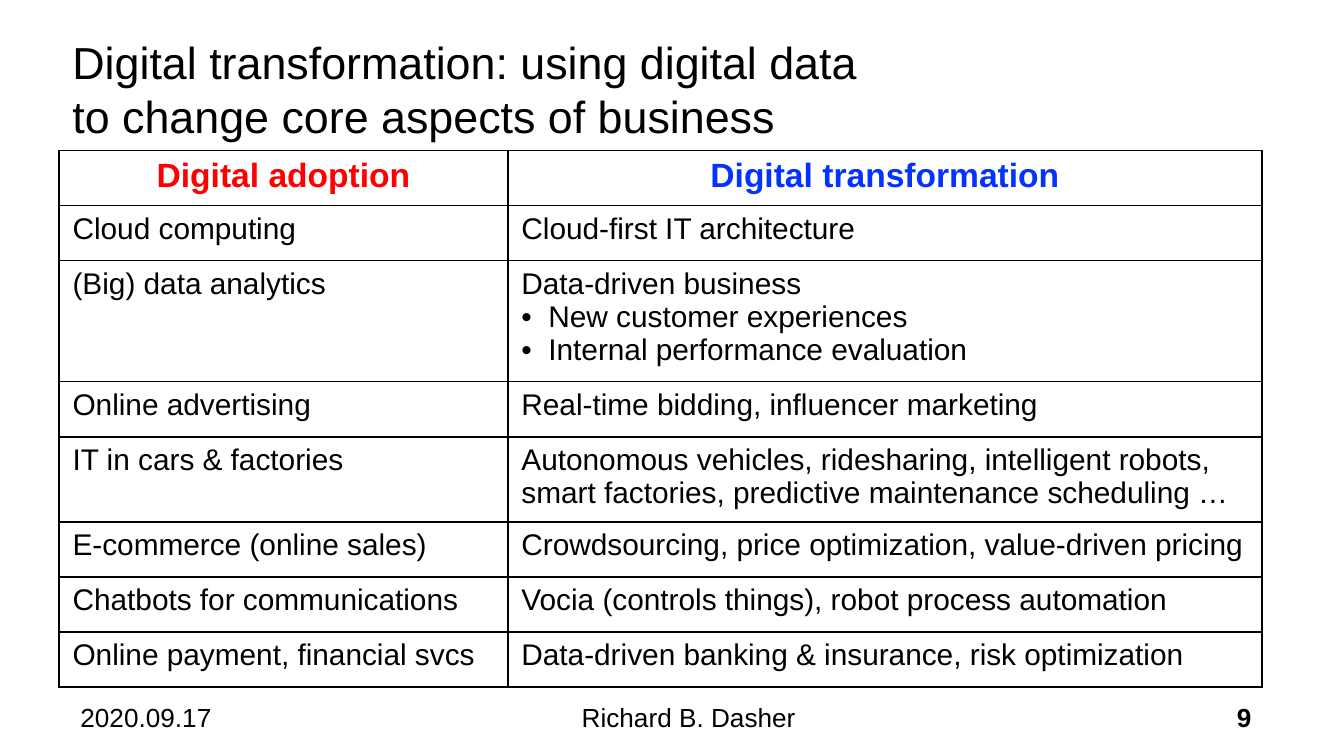
from lxml import etree
from pptx import Presentation
from pptx import util as u
from pptx.dml.color import RGBColor
from pptx.enum import text
from pptx.oxml import ns

FONT, BLACK, WHITE, RED, BLUE = "Arial", "000000", "FFFFFF", "FF0000", "0432FF"
SLIDE_WIDTH = 10
TABLE_PLACE = (0.44, 1.12, 8.94, 3.97)
COLUMN_WIDTHS = (3.34, 5.61)
ROW_HEIGHT = 0.41
HEADERS = (("Digital adoption", RED), ("Digital transformation", BLUE))
TOPICS = (
    ("Cloud computing", "Cloud-first IT architecture"),
    ("(Big) data analytics",
     "Data-driven business\n•  New customer experiences\n•  Internal performance evaluation"),
    ("Online advertising", "Real-time bidding, influencer marketing"),
    ("IT in cars & factories",
     "Autonomous vehicles, ridesharing, intelligent robots, "
     "smart factories, predictive maintenance scheduling …"),
    ("E-commerce (online sales)", "Crowdsourcing, price optimization, value-driven pricing"),
    ("Chatbots for communications", "Vocia (controls things), robot process automation"),
    ("Online payment, financial svcs", "Data-driven banking & insurance, risk optimization"),
)
FOOTERS = (
    ((0.5, 5.12, 2.08, 0.38), "2020.09.17", "LEFT", False),
    ((3.06, 5.12, 4.13, 0.38), "Richard B. Dasher", "CENTER", False),
    ((7.33, 5.12, 2.08, 0.38), "9", "RIGHT", True),
)


def color(value):
    return RGBColor.from_string(value)


def write(frame, words, size, ink=BLACK, bold=False, align="LEFT"):
    for index, line in enumerate(words.split("\n")):
        para = frame.add_paragraph() if index else frame.paragraphs[0]
        para.alignment = getattr(text.PP_ALIGN, align)
        span = para.add_run()
        span.text = line
        for name, value in {"name": FONT, "size": u.Pt(size), "bold": bold}.items():
            setattr(span.font, name, value)
        span.font.color.rgb = color(ink)


def add_text(page, place, words, size, anchor, **style):
    box = page.shapes.add_textbox(*map(u.Inches, place))
    frame = box.text_frame
    frame.word_wrap = True
    frame.vertical_anchor = anchor
    write(frame, words, size, **style)


def style_cell(cell):
    properties = cell._tc.get_or_add_tcPr()
    for side in ("lnL", "lnR", "lnT", "lnB"):
        line = etree.SubElement(properties, ns.qn(f"a:{side}"), w=str(u.Pt(1)))
        fill = etree.SubElement(line, ns.qn("a:solidFill"))
        etree.SubElement(fill, ns.qn("a:srgbClr"), val=BLACK)
    cell.fill.solid()
    cell.fill.fore_color.rgb = color(WHITE)


def add_comparison(page):
    holder = page.shapes.add_table(
        len(TOPICS) + 1, len(HEADERS), *map(u.Inches, TABLE_PLACE))
    table = holder.table
    for column, width in zip(table.columns, COLUMN_WIDTHS):
        column.width = u.Inches(width)
    for row in table.rows:
        row.height = u.Inches(ROW_HEIGHT)
    holder.width, holder.height = map(u.Inches, TABLE_PLACE[2:])
    for cell in table.iter_cells():
        style_cell(cell)
    for column, (words, ink) in enumerate(HEADERS):
        write(table.cell(0, column).text_frame, words, 18, ink, True, "CENTER")
    for row, topic in enumerate(TOPICS, 1):
        for column, words in enumerate(topic):
            write(table.cell(row, column).text_frame, words, 16)


def main():
    """Build the slide comparing digital adoption with digital transformation."""
    deck = Presentation()
    deck.slide_width = u.Inches(SLIDE_WIDTH)
    deck.slide_height = u.Inches(SLIDE_WIDTH * 9 / 16)
    page = deck.slides.add_slide(deck.slide_layouts[6])
    add_text(page, (0.44, 0.19, 6.15, 0.94),
             "Digital transformation: using digital data to change core aspects of business",
             24, text.MSO_ANCHOR.MIDDLE)
    add_comparison(page)
    for place, words, align, bold in FOOTERS:
        add_text(page, place, words, 14, text.MSO_ANCHOR.BOTTOM, align=align, bold=bold)
    deck.save("out.pptx")


if __name__ == "__main__":
    main()
